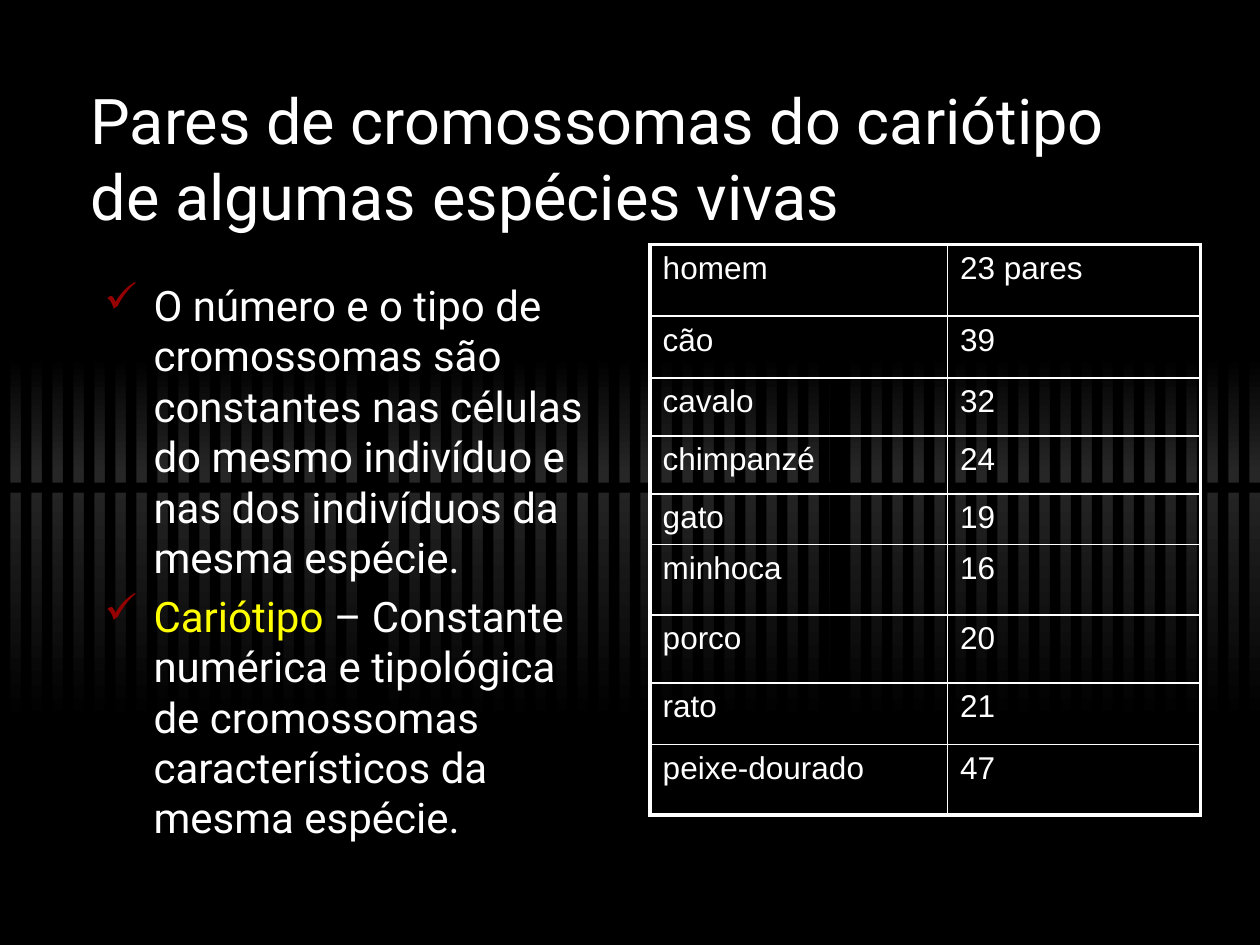
from lxml.etree import SubElement
from pptx import Presentation
from pptx.dml.color import RGBColor
from pptx.enum.shapes import MSO_SHAPE as Shape
from pptx.enum.text import MSO_ANCHOR as Anchor
from pptx.oxml.ns import qn
from pptx.util import Inches, Pt

COLORS = {
    "black": "000000",
    "glow": "262626",
    "white": "FFFFFF",
    "yellow": "FFFF00",
    "check": "960000",
}
TITLE = "Pares de cromossomas do cariótipo de algumas espécies vivas"
POINTS = [
    [("O número e o tipo de cromossomas são constantes nas células do mesmo "
      "indivíduo e nas dos indivíduos da mesma espécie.", "white")],
    [("Cariótipo", "yellow"),
     (" – Constante numérica e tipológica de cromossomas característicos "
      "da mesma espécie.", "white")],
]
SPECIES = [
    ("homem", "23 pares", 0.57),
    ("cão", "39", 0.49),
    ("cavalo", "32", 0.46),
    ("chimpanzé", "24", 0.46),
    ("gato", "19", 0.4),
    ("minhoca", "16", 0.56),
    ("porco", "20", 0.54),
    ("rato", "21", 0.49),
    ("peixe-dourado", "47", 0.56),
]


def rgb(name):
    """Return the named colour."""
    return RGBColor.from_string(COLORS[name])


def style_font(font, name, size, color="white"):
    """Set the face, size and colour of a font."""
    font.name = name
    font.size = Pt(size)
    font.color.rgb = rgb(color)


def add_band(slide, left, top, width, height, colors):
    """Add a borderless rectangle, plain or with a vertical gradient."""
    shape = slide.shapes.add_shape(
        Shape.RECTANGLE, Inches(left), Inches(top), Inches(width), Inches(height))
    shape.shadow.inherit = False
    shape.line.fill.background()
    if len(colors) == 1:
        shape.fill.solid()
        shape.fill.fore_color.rgb = rgb(colors[0])
    else:
        shape.fill.gradient()
        shape.fill.gradient_angle = 270
        for stop, color in zip(shape.fill.gradient_stops, colors):
            stop.color.rgb = rgb(color)


def add_backdrop(slide, left, top, width, height):
    """Add two glowing bands cut by evenly spaced black bars."""
    slide.background.fill.solid()
    slide.background.fill.fore_color.rgb = rgb("black")
    add_band(slide, left, top + 0.33, width, 0.92, ["black", "glow"])
    add_band(slide, left, top + 1.25, width, 2, ["glow", "black"])
    count = 60
    pitch = width / count
    bar = pitch / 2
    wide_bars = {17: 0, 40: -bar}
    for index in range(count):
        shift = wide_bars.get(index, 0)
        bar_width = pitch if index in wide_bars else bar
        add_band(slide, left + index * pitch + shift, top, bar_width, height, ["black"])
    add_band(slide, left, top + 1.33, width, 0.08, ["black"])


def add_text_frame(slide, left, top, width, height):
    """Add a wrapping text box and return its text frame."""
    box = slide.shapes.add_textbox(
        Inches(left), Inches(top), Inches(width), Inches(height))
    box.text_frame.word_wrap = True
    return box.text_frame


def add_title(slide, left, top, width, height):
    """Add the slide title, centred vertically in its box."""
    frame = add_text_frame(slide, left, top, width, height)
    frame.vertical_anchor = Anchor.MIDDLE
    frame.text = TITLE
    style_font(frame.paragraphs[0].runs[0].font, "Roboto", 36)


def add_check_bullet(paragraph):
    """Give a paragraph a hanging check mark."""
    properties = paragraph._p.get_or_add_pPr()
    properties.set("marL", str(Inches(0.5)))
    properties.set("indent", str(Inches(-0.39)))
    bullet_color = SubElement(properties, qn("a:buClr"))
    SubElement(bullet_color, qn("a:srgbClr"), val=COLORS["check"])
    SubElement(properties, qn("a:buChar"), char="✓")


def add_points(slide, left, top, width, height):
    """Add the checked list of statements."""
    frame = add_text_frame(slide, left, top, width, height)
    for index, parts in enumerate(POINTS):
        paragraph = frame.add_paragraph() if index else frame.paragraphs[0]
        add_check_bullet(paragraph)
        if index:
            paragraph.space_before = Pt(4.8)
        for text, color in parts:
            run = paragraph.add_run()
            run.text = text
            style_font(run.font, "Roboto", 24, color)


def set_borders(cell, outer_sides):
    """Draw white cell borders, heavier on the outer sides."""
    properties = cell._tc.get_or_add_tcPr()
    for side in "LRTB":
        weight = Pt(2.25 if side in outer_sides else 1)
        line = SubElement(properties, qn(f"a:ln{side}"), w=str(weight))
        fill = SubElement(line, qn("a:solidFill"))
        SubElement(fill, qn("a:srgbClr"), val=COLORS["white"])


def add_species_table(slide, left, top, width, height):
    """Add the table of chromosome pairs by species."""
    table = slide.shapes.add_table(
        len(SPECIES), 2, Inches(left), Inches(top), Inches(width), Inches(height)).table
    table.first_row = False
    table.horz_banding = False
    name_width = 2.36
    table.columns[0].width = Inches(name_width)
    table.columns[1].width = Inches(width - name_width)
    for row, (*texts, row_height) in enumerate(SPECIES):
        table.rows[row].height = Inches(row_height)
        row_edges = {0: "T", len(SPECIES) - 1: "B"}.get(row, "")
        for column, text in enumerate(texts):
            cell = table.cell(row, column)
            cell.text = text
            style_font(cell.text_frame.paragraphs[0].runs[0].font, "Arial", 18)
            set_borders(cell, "LR"[column] + row_edges)
            cell.fill.background()


def main():
    """Build and save the slide."""
    presentation = Presentation()
    presentation.slide_width = Inches(10)
    presentation.slide_height = Inches(7.5)
    slide = presentation.slides.add_slide(presentation.slide_layouts[6])
    add_backdrop(slide, 0, 2.5, 10, 3.92)
    add_title(slide, 0.62, 0.75, 8.75, 1)
    add_points(slide, 0.62, 2.17, 4.29, 4.17)
    add_species_table(slide, 5.16, 1.94, 4.37, 4.53)
    presentation.save("out.pptx")


if __name__ == "__main__":
    main()
